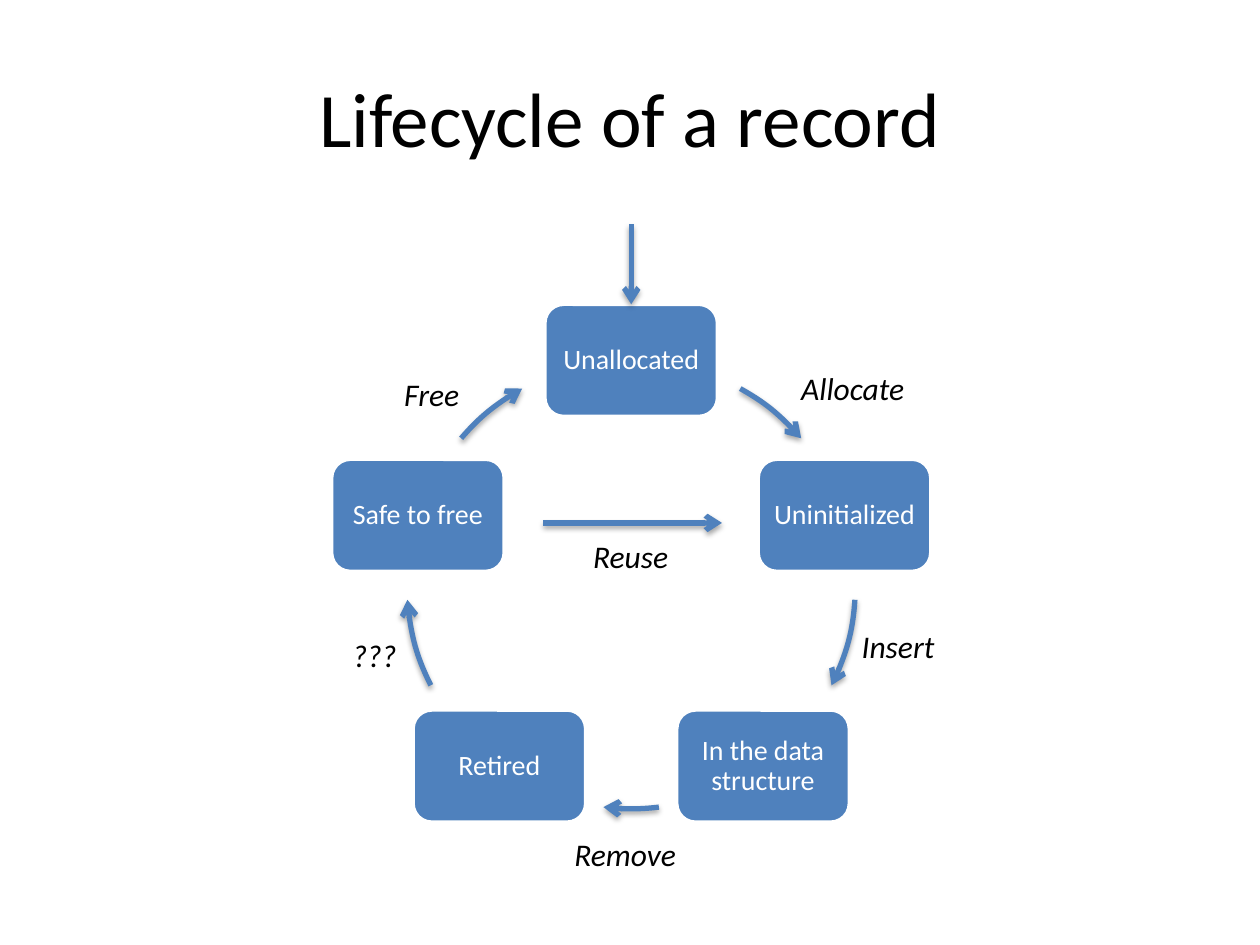
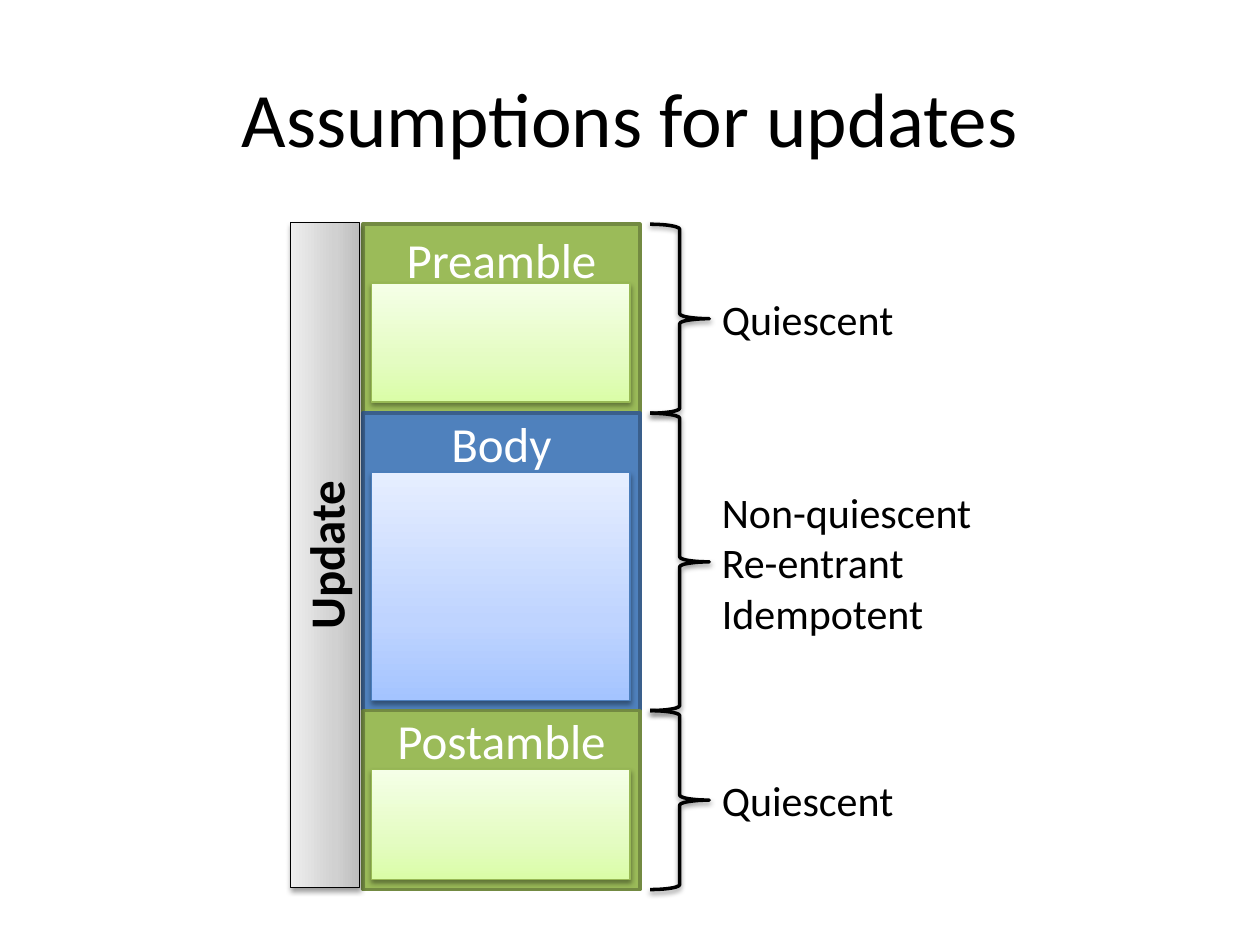
from copy import deepcopy
from math import cos, radians, sin

from lxml.etree import SubElement
from pptx import Presentation
from pptx.dml.color import RGBColor
from pptx.enum.shapes import MSO_CONNECTOR, MSO_SHAPE
from pptx.enum.text import MSO_ANCHOR, MSO_AUTO_SIZE, PP_ALIGN
from pptx.oxml.ns import qn
from pptx.util import Inches, Pt

FONT = "Calibri"
BLACK = RGBColor(0x00, 0x00, 0x00)
WHITE = RGBColor(0xFF, 0xFF, 0xFF)
BLUE = RGBColor(0x4F, 0x81, 0xBD)
BLUE_EDGE = RGBColor(0x3A, 0x5F, 0x8C)
BLUE_RIM = RGBColor(0x4B, 0x7E, 0xBC)
GREEN = RGBColor(0x9B, 0xBB, 0x59)
GREEN_EDGE = RGBColor(0x73, 0x8A, 0x42)
GREEN_RIM = RGBColor(0x98, 0xB9, 0x55)
# Gradients run from dark to light
BLUE_FADE = [RGBColor(0xA4, 0xC4, 0xFF), RGBColor(0xBF, 0xD4, 0xFF), RGBColor(0xE6, 0xEE, 0xFF)]
GREEN_FADE = [RGBColor(0xDA, 0xFD, 0xA7), RGBColor(0xE4, 0xFC, 0xC2), RGBColor(0xF5, 0xFF, 0xE7)]
GREY_FADE = [RGBColor(0xBD, 0xBD, 0xBD), RGBColor(0xD1, 0xD1, 0xD1), RGBColor(0xEE, 0xEE, 0xEE)]
FADE_POSITIONS = [0, 0.35, 1]


def write(paragraph, text, size, color=BLACK, bold=False, italic=False, align=PP_ALIGN.LEFT):
    paragraph.alignment = align
    run = paragraph.add_run()
    run.text = text
    run.font.name = FONT
    run.font.size = Pt(size)
    run.font.color.rgb = color
    run.font.bold = bold
    run.font.italic = italic


def add_shadow(shape, opacity, distance):
    effects = SubElement(shape._element.spPr, qn("a:effectLst"))
    shadow = SubElement(effects, qn("a:outerShdw"), blurRad=str(Pt(3.1)), dist=str(Pt(distance)),
                        dir="5400000", rotWithShape="0")
    color = SubElement(shadow, qn("a:srgbClr"), val=str(BLACK))
    SubElement(color, qn("a:alpha"), val=str(opacity * 1000))


prs = Presentation()
prs.slide_width, prs.slide_height = Inches(10), Inches(7.5)

# Slides and titles
slides = []
for heading in ["Lifecycle of a record", "Assumptions for updates"]:
    slide = prs.slides.add_slide(prs.slide_layouts[5])
    title = slide.shapes.title
    title.left, title.top = Inches(0.5), Inches(0.3)
    title.width, title.height = Inches(9), Inches(1.25)
    title.text_frame.vertical_anchor = MSO_ANCHOR.MIDDLE
    write(title.text_frame.paragraphs[0], heading, 44, align=PP_ALIGN.CENTER)
    slides.append(slide)
lifecycle, assumptions = slides

# Lifecycle: states evenly spaced clockwise round a circle
CENTER_X, CENTER_Y, RADIUS = 5.01, 4.64, 1.78
STATE_W, STATE_H = 1.37, 0.89
states = []
for index, name in enumerate(
        ["Unallocated", "Uninitialized", "In the data structure", "Retired", "Safe to free"]):
    angle = radians(72 * index)
    state = lifecycle.shapes.add_shape(
        MSO_SHAPE.ROUNDED_RECTANGLE,
        Inches(CENTER_X + RADIUS * sin(angle) - STATE_W / 2),
        Inches(CENTER_Y - RADIUS * cos(angle) - STATE_H / 2),
        Inches(STATE_W), Inches(STATE_H))
    state.shadow.inherit = False
    state.fill.solid()
    state.fill.fore_color.rgb = BLUE
    state.line.color.rgb = WHITE
    state.line.width = Pt(2)
    frame = state.text_frame
    frame.word_wrap = True
    frame.vertical_anchor = MSO_ANCHOR.MIDDLE
    frame.margin_left = frame.margin_right = Inches(0.06)
    frame.paragraphs[0].line_spacing = 0.9
    write(frame.paragraphs[0], name, 16, WHITE, align=PP_ALIGN.CENTER)
    states.append(state)

# Curved transitions on the same circle, in degrees clockwise from the top
ARC_UNIT = 0.6  # adjustment value of one degree
transitions = []
for ends in [(29.1, 49.3), (93.9, 116.7), (172.9, 187.1), (243.3, 266.1), (310.7, 330.9)]:
    arc = lifecycle.shapes.add_shape(
        MSO_SHAPE.ARC, Inches(CENTER_X - RADIUS), Inches(CENTER_Y - RADIUS),
        Inches(2 * RADIUS), Inches(2 * RADIUS))
    for index, degrees in enumerate(ends):
        arc.adjustments[index] = (degrees - 90) % 360 * ARC_UNIT
    arc.fill.background()
    transitions.append(arc)

# Straight transitions: entry and reuse
for x1, y1, x2, y2 in [(CENTER_X, 1.78, CENTER_X, 2.41), (4.31, 4.15, 5.73, 4.15)]:
    transitions.append(lifecycle.shapes.add_connector(
        MSO_CONNECTOR.STRAIGHT, Inches(x1), Inches(y1), Inches(x2), Inches(y2)))
entry = transitions[-2]
entry.end_connect(states[0], 0)

for transition in transitions:
    transition.line.color.rgb = BLUE
    transition.line.width = Pt(3)
    SubElement(transition.line._get_or_add_ln(), qn("a:tailEnd"), type="arrow")
    add_shadow(transition, 35, 1.8)

# Transition labels
for action, left, top, width in [
        ("Allocate", 6.26, 2.88, 1.03), ("Free", 3.11, 2.93, 0.65), ("Insert", 6.74, 4.93, 0.78),
        ("Remove", 4.46, 6.58, 1.02), ("Reuse", 4.61, 4.21, 0.8), ("???", 2.7, 5, 0.55)]:
    label = lifecycle.shapes.add_textbox(Inches(left), Inches(top), Inches(width), Inches(0.4))
    label.text_frame.word_wrap = False
    label.text_frame.auto_size = MSO_AUTO_SIZE.SHAPE_TO_FIT_TEXT
    write(label.text_frame.paragraphs[0], action, 18, italic=True)

# Assumptions: stacked phases, each with a brace and its properties
top = 1.78
for phase, height, inset, fill, edge, properties in [
        ("Preamble", 1.5, 0.04, GREEN, GREEN_EDGE, ["Quiescent"]),
        ("Body", 2.36, 0, BLUE, BLUE_EDGE, ["Non-quiescent", "Re-entrant", "Idempotent"]),
        ("Postamble", 1.42, 0, GREEN, GREEN_EDGE, ["Quiescent"])]:
    band = assumptions.shapes.add_shape(
        MSO_SHAPE.RECTANGLE, Inches(2.88), Inches(top), Inches(2.2), Inches(height))
    band.shadow.inherit = False
    band.fill.solid()
    band.fill.fore_color.rgb = fill
    band.line.color.rgb = edge
    band.line.width = Pt(2)
    band.text_frame.vertical_anchor = MSO_ANCHOR.TOP
    band.text_frame.margin_top = Inches(inset)
    write(band.text_frame.paragraphs[0], phase, 28, WHITE, align=PP_ALIGN.CENTER)

    brace = assumptions.shapes.add_shape(
        MSO_SHAPE.RIGHT_BRACE, Inches(5.16), Inches(top), Inches(0.47), Inches(height))
    brace.fill.background()
    brace.line.color.rgb = BLACK
    brace.line.width = Pt(2)
    add_shadow(brace, 38, 1.6)

    notes = assumptions.shapes.add_textbox(
        Inches(5.63), Inches(top), Inches(2.28), Inches(height)).text_frame
    notes.word_wrap = True
    notes.vertical_anchor = MSO_ANCHOR.MIDDLE
    for index, item in enumerate(properties):
        write(notes.add_paragraph() if index else notes.paragraphs[0], item, 24)
    top += height

# Gradient panels inside the phases, and the turned update bar
for left, top, width, height, fade, rim, rotation, text in [
        (2.95, 2.25, 2.05, 0.94, GREEN_FADE, GREEN_RIM, 0, ""),
        (2.95, 3.75, 2.05, 1.81, BLUE_FADE, BLUE_RIM, 0, ""),
        (2.95, 6.11, 2.05, 0.87, GREEN_FADE, GREEN_RIM, 0, ""),
        (-0.06, 4.13, 5.28, 0.55, GREY_FADE, BLACK, 270, "Update")]:
    panel = assumptions.shapes.add_shape(
        MSO_SHAPE.RECTANGLE, Inches(left), Inches(top), Inches(width), Inches(height))
    panel.rotation = rotation
    panel.fill.gradient()
    panel.fill.gradient_angle = 90
    stop_list = panel._element.spPr.find(qn("a:gradFill")).find(qn("a:gsLst"))
    stop_list.append(deepcopy(stop_list[0]))
    for stop, position, color in zip(panel.fill.gradient_stops, FADE_POSITIONS, fade):
        stop.position = position
        stop.color.rgb = color
    panel.line.color.rgb = rim
    panel.line.width = Pt(0.75)
    add_shadow(panel, 38, 1.6)
    if text:
        panel.text_frame.vertical_anchor = MSO_ANCHOR.MIDDLE
        write(panel.text_frame.paragraphs[0], text, 28, bold=True, align=PP_ALIGN.CENTER)

prs.save("out.pptx")
